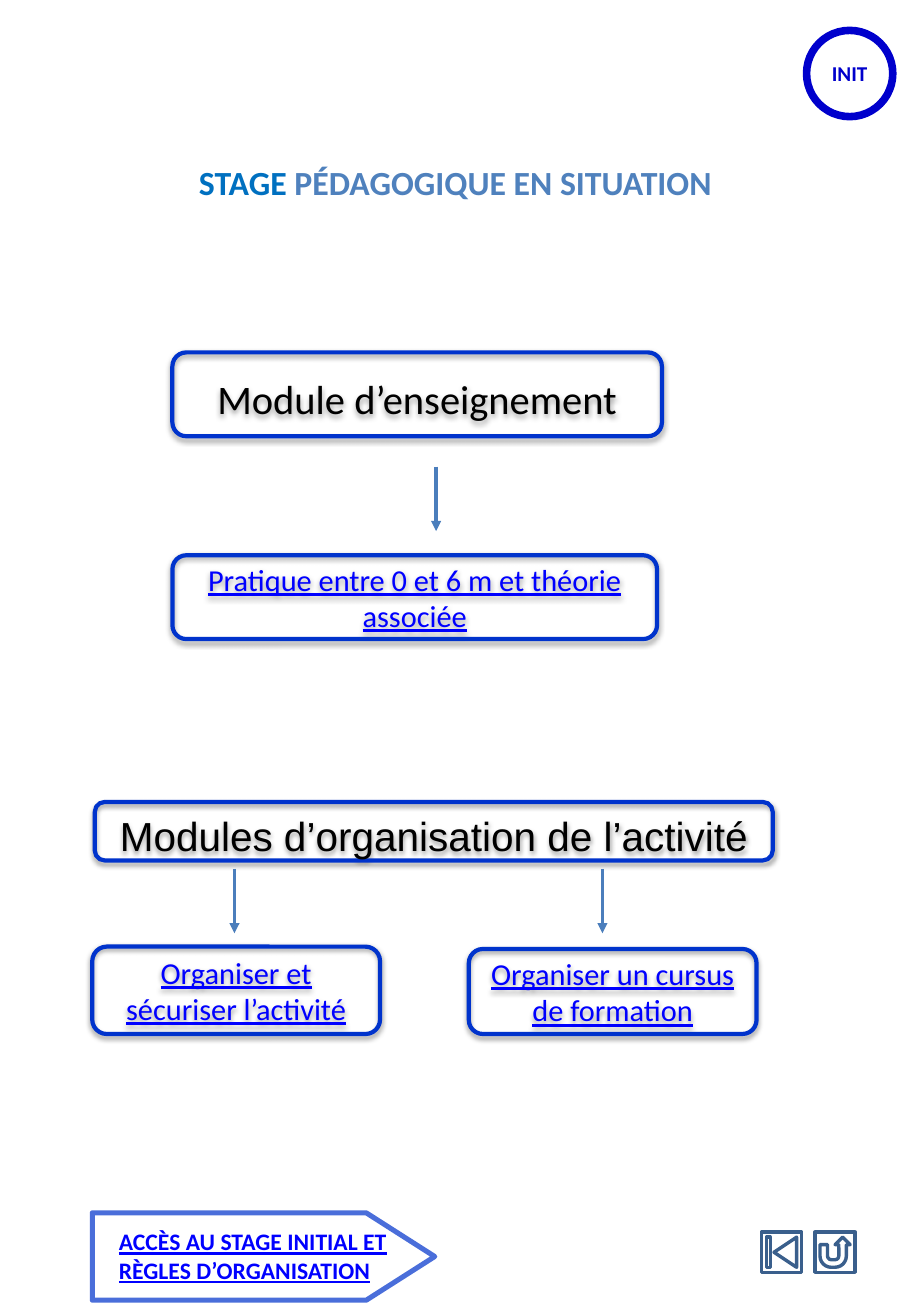
"""Build the navigation slide of the teaching placement."""
from lxml import etree
from pptx import Presentation
from pptx.dml.color import RGBColor
from pptx.enum import shapes, text
from pptx.oxml import ns
from pptx.util import Pt

BLACK = RGBColor(0x00, 0x00, 0x00)
WHITE = RGBColor(0xFF, 0xFF, 0xFF)
LINK = RGBColor(0x00, 0x00, 0xFF)
BADGE = RGBColor(0x00, 0x00, 0xCC)
FRAME = RGBColor(0x00, 0x33, 0xCC)
ARROW = RGBColor(0x4B, 0x7E, 0xBC)
BUTTON = RGBColor(0x3A, 0x5F, 0x8C)
STAGE = RGBColor(0x00, 0x70, 0xC0)
SUBJECT = RGBColor(0x4F, 0x81, 0xBD)

HEADING = [("STAGE ", STAGE), ("PÉDAGOGIQUE EN SITUATION", SUBJECT)]
ACCESS = "ACCÈS AU STAGE INITIAL ET RÈGLES D’ORGANISATION"
MODULE_FORMAT = dict(size=24, color=BLACK, spacing=1.15)
LINK_FORMAT = dict(size=18, color=LINK, underline=True)
MODULES = [
    ("Module d’enseignement", (102.2, 208.8, 290.2, 49.7), MODULE_FORMAT),
    ("Pratique entre 0 et 6 m et théorie associée",
     (102.2, 329, 287.3, 49.7), LINK_FORMAT),
    ("Modules d’organisation de l’activité", (56.2, 475.2, 401.8, 34.6),
     dict(MODULE_FORMAT, font="Arial")),
    ("Organiser et sécuriser l’activité", (54.7, 560.9, 170.6, 51.8), LINK_FORMAT),
    ("Organiser un cursus de formation", (277.9, 562.3, 170.6, 50.4), LINK_FORMAT),
]
ARROW_LENGTH = 38.2
ARROW_STARTS = [(258.5, 276.5), (139, 514.8), (357.1, 514.8)]
BUTTON_TOP, BUTTON_SIZE = 730.1, 23.8
BUTTONS = [(shapes.MSO_SHAPE.ACTION_BUTTON_BEGINNING, 451.4),
           (shapes.MSO_SHAPE.ACTION_BUTTON_RETURN, 483.1)]


def write(frame, words, size, color=None, font="Calibri", bold=False, underline=False,
          align=text.PP_ALIGN.CENTER, anchor=text.MSO_ANCHOR.MIDDLE,
          spacing=None, after=0, wrap=True):
    """Fill a text frame with one formatted paragraph."""
    frame.word_wrap = wrap
    frame.auto_size = text.MSO_AUTO_SIZE.NONE
    frame.vertical_anchor = anchor
    paragraph = frame.paragraphs[0]
    paragraph.alignment = align
    paragraph.line_spacing = spacing
    paragraph.space_before, paragraph.space_after = Pt(0), Pt(after)
    for part, part_color in [(words, color)] if isinstance(words, str) else words:
        run = paragraph.add_run()
        run.text = part
        run.font.name, run.font.size = font, Pt(size)
        run.font.bold, run.font.underline = bold, underline
        run.font.color.rgb = part_color


def outline(slide, preset, box, color, width, fill=None):
    """Add a preset shape with a coloured outline and no shadow."""
    shape = slide.shapes.add_shape(preset, *map(Pt, box))
    shape.shadow.inherit = False
    if fill is None:
        shape.fill.background()
    else:
        shape.fill.solid()
        shape.fill.fore_color.rgb = fill
    shape.line.color.rgb = color
    shape.line.width = Pt(width)
    return shape


def cast_shadow(shape):
    """Give a shape a soft shadow below it."""
    effects = shape._element.spPr.find(ns.qn("a:effectLst"))
    shadow = etree.SubElement(effects, ns.qn("a:outerShdw"), blurRad=str(Pt(3.15)),
                              dist=str(Pt(1.57)), dir="5400000", rotWithShape="0")
    tint = etree.SubElement(shadow, ns.qn("a:srgbClr"), val=str(BLACK))
    etree.SubElement(tint, ns.qn("a:alpha"), val="38000")


def add_arrow(slide, x, y):
    """Add a downward arrow."""
    arrow = slide.shapes.add_connector(shapes.MSO_CONNECTOR.STRAIGHT,
                                       Pt(x), Pt(y), Pt(x), Pt(y + ARROW_LENGTH))
    arrow.line.color.rgb = ARROW
    arrow.line.width = Pt(2)
    etree.SubElement(arrow.line._get_or_add_ln(), ns.qn("a:tailEnd"), type="triangle")
    etree.SubElement(arrow._element.spPr, ns.qn("a:effectLst"))


def main():
    """Assemble and save the slide."""
    deck = Presentation()
    deck.slide_width, deck.slide_height = Pt(540), Pt(779.76)
    slide = deck.slides.add_slide(deck.slide_layouts[5])

    heading = slide.shapes.title
    heading.left, heading.top, heading.width, heading.height = map(
        Pt, (46.1, 92.2, 447.8, 31.7))
    write(heading.text_frame, HEADING, 20, bold=True, anchor=text.MSO_ANCHOR.TOP)

    badge = outline(slide, shapes.MSO_SHAPE.OVAL, (478.1, 18, 51.1, 51.1),
                    BADGE, 4.5, WHITE)
    write(badge.text_frame, "INIT", 12.5, BADGE, bold=True, wrap=False)

    for words, box, look in MODULES:
        module = outline(slide, shapes.MSO_SHAPE.ROUNDED_RECTANGLE, box, FRAME, 2.5)
        cast_shadow(module)
        write(module.text_frame, words, after=10, **look)
    for x, y in ARROW_STARTS:
        add_arrow(slide, x, y)

    signpost = outline(slide, shapes.MSO_SHAPE.FLOWCHART_OFFPAGE_CONNECTOR,
                       (130.3, 643, 51.8, 203), FRAME, 3)
    signpost.rotation = 270
    tint = signpost.line._get_or_add_ln().find(".//" + ns.qn("a:srgbClr"))
    etree.SubElement(tint, ns.qn("a:alpha"), val="71000")
    access = slide.shapes.add_textbox(*map(Pt, (63.4, 723.6, 189.4, 41)))
    write(access.text_frame, ACCESS, 14, LINK, bold=True, underline=True,
          align=text.PP_ALIGN.LEFT, anchor=text.MSO_ANCHOR.TOP)

    for preset, left in BUTTONS:
        outline(slide, preset, (left, BUTTON_TOP, BUTTON_SIZE, BUTTON_SIZE), BUTTON, 2)
    deck.save("out.pptx")


if __name__ == "__main__":
    main()
